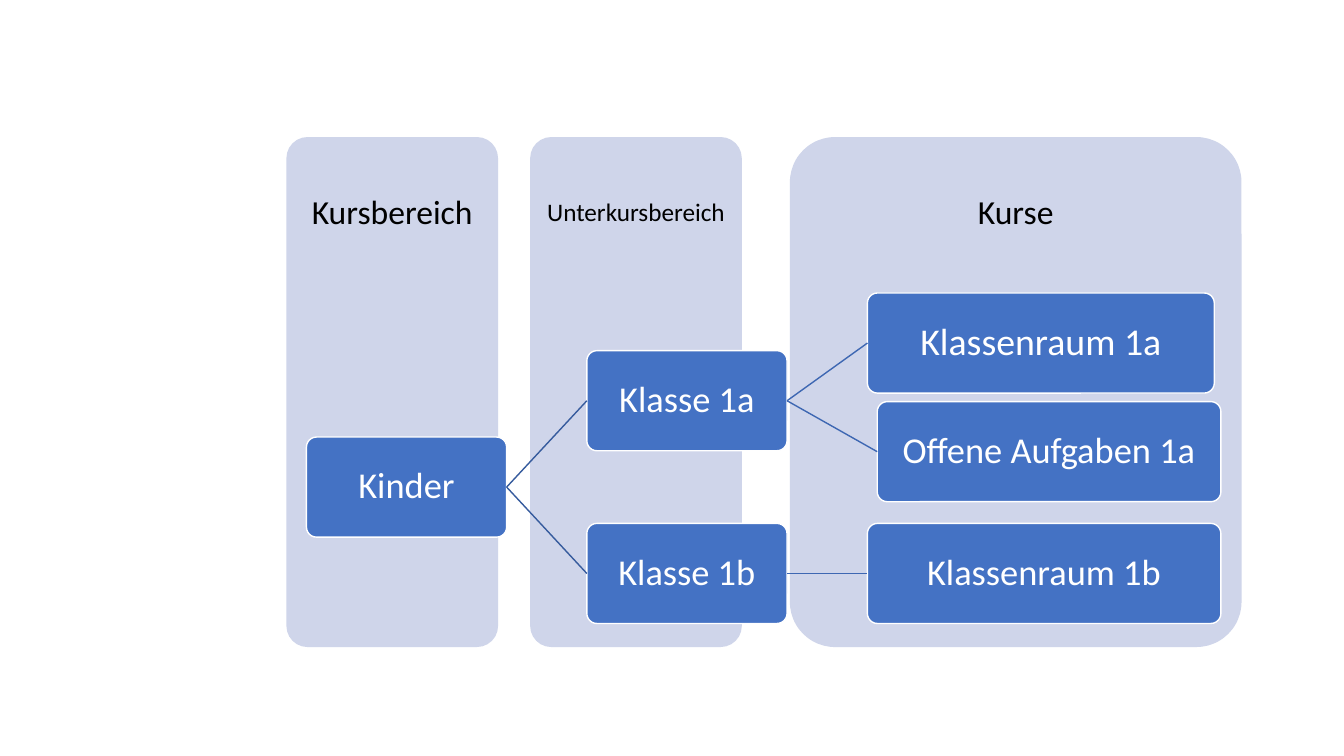
from lxml import etree
from pptx import Presentation
from pptx.dml.color import RGBColor
from pptx.enum.shapes import MSO_CONNECTOR, MSO_SHAPE
from pptx.enum.text import MSO_ANCHOR, PP_ALIGN
from pptx.oxml.ns import qn
from pptx.util import Pt

ROUND = MSO_SHAPE.ROUNDED_RECTANGLE
STRAIGHT = MSO_CONNECTOR.STRAIGHT
MIDDLE = MSO_ANCHOR.MIDDLE
CENTER = PP_ALIGN.CENTER
LEFT_SIDE, RIGHT_SIDE = 1, 3

PALE = RGBColor(0xCF, 0xD5, 0xEA)
BLUE = RGBColor(0x44, 0x72, 0xC4)
DARK = RGBColor(0x36, 0x5B, 0x9D)
MID = RGBColor(0x3E, 0x67, 0xB2)
WHITE = RGBColor(0xFF, 0xFF, 0xFF)
BLACK = RGBColor(0, 0, 0)

COL_TOP, COL_HIGH, HEAD_HIGH = 97.9, 364.3, 109.4
BOX_HIGH = 71.5

# text, left, width, font size, margin
COLUMNS = [
    ("Kursbereich", 204.6, 151.2, 24, 13.4),
    ("Unterkursbereich", 378.7, 151.2, 18, 10),
    ("Kurse", 564.2, 322.6, 24, 13.4),
]
# text: left, top, width, font size
BOXES = {
    "Kinder": (218.9, 312.2, 143, 26),
    "Klasse 1a": (419.2, 250.5, 143, 26),
    "Klasse 1b": (419.2, 373.9, 143, 26),
    "Klassenraum 1a": (619.6, 209.3, 247.8, 27),
    "Offene Aufgaben 1a": (626.6, 286.9, 245.5, 26),
    "Klassenraum 1b": (619.6, 373.9, 252.5, 26),
}
# parent, child, colour
LINKS = [
    ("Kinder", "Klasse 1a", DARK),
    ("Kinder", "Klasse 1b", DARK),
    ("Klasse 1a", "Klassenraum 1a", MID),
    ("Klasse 1a", "Offene Aufgaben 1a", MID),
    ("Klasse 1b", "Klassenraum 1b", MID),
]


def apply(item, values):
    for name, value in values.items():
        setattr(item, name, value)


def write(shape, text, size, color, margin):
    frame = shape.text_frame
    sides = ("left", "right", "top", "bottom")
    apply(frame, {f"margin_{side}": Pt(margin) for side in sides})
    apply(frame, {"word_wrap": True, "vertical_anchor": MIDDLE})
    para = frame.paragraphs[0]
    apply(para, {"alignment": CENTER, "line_spacing": 0.9})
    run = para.add_run()
    run.text = text
    apply(run.font, {"name": "Calibri", "size": Pt(size)})
    run.font.color.rgb = color


def add_panel(slide, left, top, width, height, fill):
    """Add a rounded, filled rectangle without outline or shadow."""
    panel = slide.shapes.add_shape(
        ROUND, Pt(left), Pt(top), Pt(width), Pt(height))
    panel.adjustments[0] = 0.1
    panel.shadow.inherit = False
    panel.fill.solid()
    panel.fill.fore_color.rgb = fill
    panel.line.fill.background()
    return panel


def add_column(slide, text, left, width, size, margin):
    add_panel(slide, left, COL_TOP, width, COL_HIGH, PALE)
    head = slide.shapes.add_textbox(
        Pt(left), Pt(COL_TOP), Pt(width), Pt(HEAD_HIGH))
    write(head, text, size, BLACK, margin)


def add_box(slide, text, left, top, width, size):
    box = add_panel(slide, left, top, width, BOX_HIGH, BLUE)
    box.line.color.rgb = WHITE
    box.line.width = Pt(1)
    write(box, text, size, WHITE, 3)
    return box


def add_link(slide, parent, child, color):
    link = slide.shapes.add_connector(STRAIGHT, 0, 0, 0, 0)
    link.begin_connect(parent, RIGHT_SIDE)
    link.end_connect(child, LEFT_SIDE)
    link.line.color.rgb = color
    link.line.width = Pt(1)
    etree.SubElement(link._element.spPr, qn("a:effectLst"))


def main():
    deck = Presentation()
    apply(deck, {"slide_width": Pt(960), "slide_height": Pt(540)})
    slide = deck.slides.add_slide(deck.slide_layouts[6])
    for column in COLUMNS:
        add_column(slide, *column)
    boxes = {text: add_box(slide, text, *place)
             for text, place in BOXES.items()}
    for parent, child, color in LINKS:
        add_link(slide, boxes[parent], boxes[child], color)
    deck.save("out.pptx")


if __name__ == "__main__":
    main()
